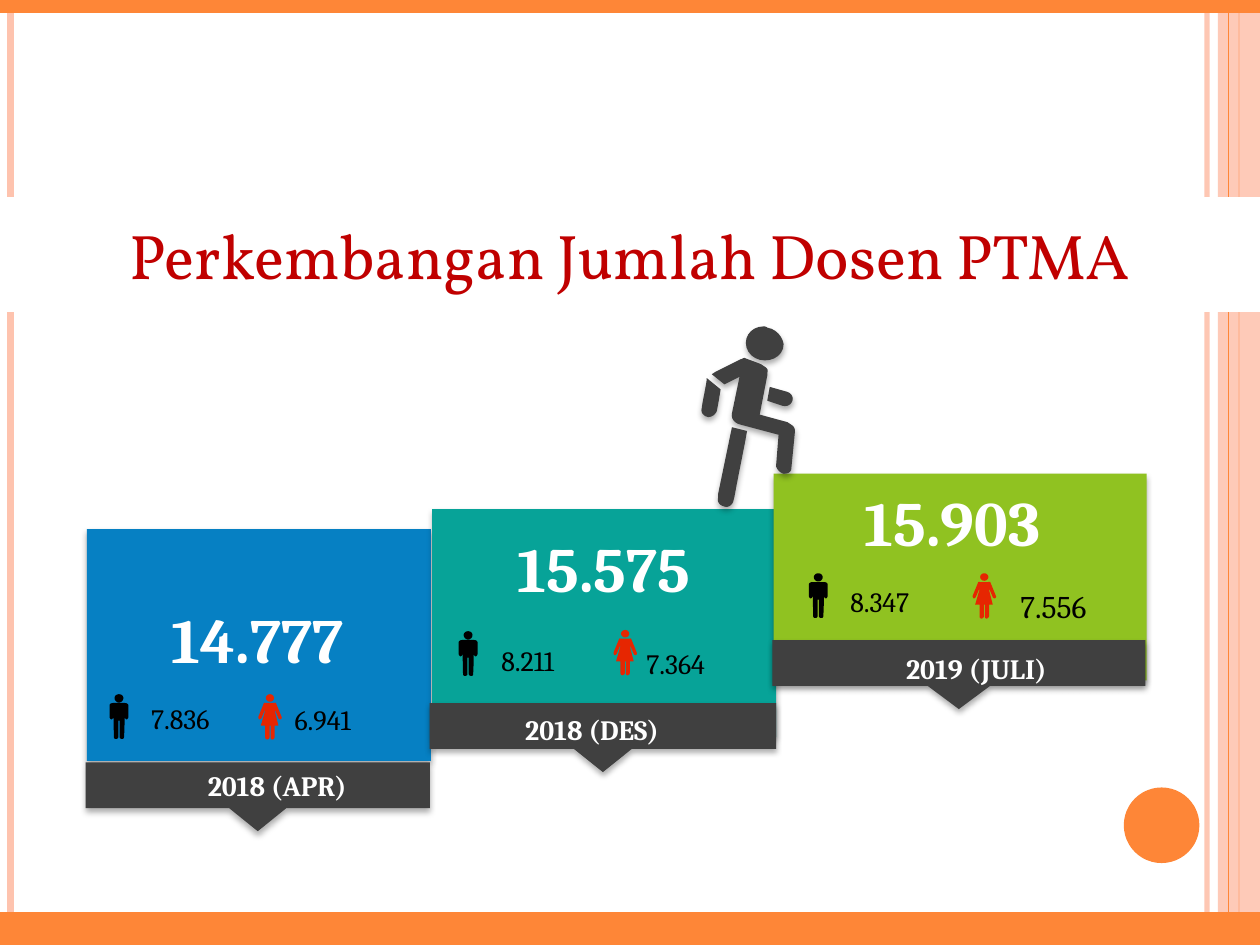
from dataclasses import dataclass

from lxml.etree import SubElement
from pptx import Presentation
from pptx.dml.color import RGBColor
from pptx.enum.shapes import MSO_CONNECTOR, MSO_SHAPE
from pptx.enum.text import MSO_ANCHOR, MSO_AUTO_SIZE, PP_ALIGN
from pptx.oxml.ns import qn
from pptx.util import Pt

COLORS = {
    "orange": "FE8637", "peach": "FEC3AE", "white": "FFFFFF", "black": "000000",
    "title": "C00000", "dark": "404040", "red": "E62601",
    "blue": "0680C3", "teal": "07A398", "green": "90C221",
}
WIDTH, HEIGHT = 720, 540
ICON_UNIT = 0.72  # points per unit in the outlines below
CURVE_STEPS = 6
FINE = 100        # freeform coordinates are whole numbers

MAN = """M 3 7 L 12 7 C 14 7 15 8 15 9 L 15 18 C 15 19 14 20 13.5 20 C 13 20 12 19 12 18
L 12 12 C 12 19 12 27 11.5 34 C 11.5 35 11 35.5 10 35.5 C 9 35.5 8 35 8 34 L 8 21 L 7 21
L 7 34 C 7 35 6 35.5 5 35.5 C 4 35.5 3.5 35 3.5 34 L 3 12 L 3 18 C 3 19 2 20 1.5 20
C 1 20 0 19 0 18 L 0 9 C 0 8 1 7 3 7
M 7.5 0 C 9.5 0 11 1.5 11 3 C 11 5 9.5 6.5 7.5 6.5 C 5.5 6.5 4 5 4 3 C 4 1.5 5.5 0 7.5 0"""
WOMAN = """M 6 7 L 12 7 C 13 7 13.5 6.5 14 7 L 18.5 18 C 19 19 18 20 17.5 20
C 17 20 16 19.5 16 19 L 13.5 13 L 13 13 L 16 25 L 13 25 L 13 34 C 13 35 12 36 11 36
C 10 36 9.8 35 9.8 34 L 9.8 25 L 9 25 L 9 34 C 9 35 8 36 7 36 C 6 36 5.5 35 5.5 34
L 5.5 25 L 2 25 L 5.5 13 L 5 13 L 2.5 19 C 2 19.5 1.5 20 1 20 C 0.5 20 0 19 0 18
L 4.5 7 C 5 6.5 5 7 6 7
M 9.3 0 C 11 0 12.5 1.5 12.5 3 C 12.5 4.5 11 6 9.3 6 C 7.5 6 6 4.5 6 3 C 6 1.5 7.5 0 9.3 0"""
CLIMBER = """M 25 81 L 29 82 L 37 84 C 34 101 30 119 27 136 L 26 140 C 25 143 22 145 19 144
C 15 143 13 140 14 137 L 14 134
M 5 42 L 16 51 C 15 57 14 63 13 68 C 12 71 9 73 6 73 C 2 72 0 69 1 66 C 2 58 4 51 5 43
M 55 49 L 69 53 C 72 54 74 57 73 60 C 72 63 69 65 65 64 L 53 60
M 35 26 C 37 27 46 30 48 31 L 51 33 C 53 34 54 36 53 38 L 53 40 L 47 71 L 69 77
L 72 79 C 74 80 75 82 75 84 L 72 115 C 71 117 69 118 66 118 C 63 117 61 115 60 112
L 62 87 L 32 79 C 27 78 24 74 25 70 L 31 41 L 19 47 L 9 39 L 12 37 L 32 27 C 33 27 34 26 35 26
M 53 2 C 60 3 65 9 66 15 C 66 23 59 28 51 28 C 43 28 36 22 36 14 C 36 7 42 1 50 1
C 51 1 52 1 53 2"""


@dataclass
class Label:
    text: str
    x: float
    y: float
    w: float
    size: float = 16


@dataclass
class Stage:
    color: str
    block: tuple[float, float, float, float]
    banner: tuple[float, float, float]
    total: Label
    period: Label
    man: tuple[float, float]
    men: Label
    woman: tuple[float, float]
    women: Label


STAGES = [
    Stage("blue", (49.7, 302.4, 196.6, 132.5), (49, 435.6, 196.6),
          Label("14.777", 68.4, 339.8, 157.7, 36), Label("2018 (APR)", 101.5, 435.6, 113.8),
          (62.6, 396.7), Label("7.836", 79.2, 397.4, 73.4),
          (147.6, 396.7), Label("6.941", 161.3, 398.2, 74.2)),
    Stage("teal", (247, 290.9, 196.6, 130.3), (245.5, 401.8, 198),
          Label("15.575", 271.4, 298.8, 147.6, 36), Label("2018 (DES)", 282.2, 403.9, 112.3),
          (262.1, 360.7), Label("8.211", 279.4, 364.3, 68.4),
          (350.6, 360), Label("7.364", 362.2, 365.8, 68.4)),
    Stage("green", (442.1, 270.7, 213.1, 118.1), (441.4, 365.8, 213.1),
          Label("15.903", 466.6, 272.9, 155.5, 36), Label("2019 (JULI)", 498.2, 368.6, 119.5),
          (462.2, 327.6), Label("8.347", 478.8, 330.5, 73.4),
          (555.8, 327.6), Label("7.556", 576, 331.9, 85, 18)),
]


def rgb(name: str) -> RGBColor:
    return RGBColor.from_string(COLORS[name])


def paint(sp, color: str) -> None:
    sp.shadow.inherit = False
    sp.fill.solid()
    sp.fill.fore_color.rgb = rgb(color)
    sp.line.fill.background()


def set_alpha(sp, percent: int) -> None:
    for clr in sp.element.spPr.iter(qn("a:srgbClr")):
        SubElement(clr, qn("a:alpha"), val=str(percent * 1000))


def cast_shadow(sp) -> None:
    effects = sp.element.spPr.find(qn("a:effectLst"))
    shadow = SubElement(effects, qn("a:outerShdw"), blurRad=str(Pt(3.5)), dist=str(Pt(2.2)),
                        dir="5400000", algn="t", rotWithShape="0")
    clr = SubElement(shadow, qn("a:srgbClr"), val=COLORS["black"])
    SubElement(clr, qn("a:alpha"), val="32000")


def add_preset(s, kind, x: float, y: float, w: float, h: float, color: str):
    sp = s.shapes.add_shape(kind, Pt(x), Pt(y), Pt(w), Pt(h))
    paint(sp, color)
    return sp


def add_stripe(s, x: float, color: str, width: float):
    c = s.shapes.add_connector(MSO_CONNECTOR.STRAIGHT, Pt(x), 0, Pt(x), Pt(HEIGHT))
    c.line.color.rgb = rgb(color)
    c.line.width = Pt(width)
    SubElement(c.element.spPr, qn("a:effectLst"))
    return c


def trace(path: str) -> list[list[tuple[float, float]]]:
    """Turn an M/L/C outline into closed polygons, sampling each cubic curve."""
    contours = []
    tokens = iter(path.split())
    for command in tokens:
        count = 3 if command == "C" else 1
        pts = [(float(next(tokens)), float(next(tokens))) for _ in range(count)]
        if command == "M":
            contours.append(pts)
        elif command == "L":
            contours[-1] += pts
        else:
            p0, (p1, p2, p3) = contours[-1][-1], pts
            for i in range(1, CURVE_STEPS + 1):
                t = i / CURVE_STEPS
                u = 1 - t
                contours[-1].append(tuple(
                    u**3 * a + 3 * u * u * t * b + 3 * u * t * t * c + t**3 * d
                    for a, b, c, d in zip(p0, p1, p2, p3)))
    return contours


def add_outline(s, contours, x: float, y: float, color: str, unit: float = ICON_UNIT):
    fine = [[(px * FINE, py * FINE) for px, py in contour] for contour in contours]
    builder = s.shapes.build_freeform(*fine[0][0], scale=Pt(unit) / FINE)
    for i, contour in enumerate(fine):
        if i:
            builder.move_to(*contour[0])
        builder.add_line_segments(contour[1:], close=True)
    sp = builder.convert_to_shape(Pt(x), Pt(y))
    paint(sp, color)
    return sp


def add_banner(s, x: float, y: float, w: float):
    mid, notch, base, tip = w / 2, w / 12, 26.2, 39.4
    pts = [(0, 0), (w, 0), (w, base), (mid + notch, base), (mid, tip), (mid - notch, base), (0, base)]
    return add_outline(s, [pts], x, y, "dark", unit=1)


def add_run(p, text: str, font: str, size: float, color: str, bold: bool = False) -> None:
    r = p.add_run()
    r.text = text
    r.font.name, r.font.size, r.font.bold = font, Pt(size), bold
    r.font.color.rgb = rgb(color)


def add_label(s, label: Label, heading: bool = False) -> None:
    height = label.size * 1.2 + 7.4
    tf = s.shapes.add_textbox(Pt(label.x), Pt(label.y), Pt(label.w), Pt(height)).text_frame
    tf.word_wrap = True
    p = tf.paragraphs[0]
    p.alignment = PP_ALIGN.CENTER if heading else PP_ALIGN.LEFT
    add_run(p, label.text, "Cambria", label.size, "white" if heading else "black", heading)


def add_frame(s) -> None:
    set_alpha(add_stripe(s, 689.8, "peach", 3), 93)
    add_stripe(s, 6, "peach", 4.5)
    add_stripe(s, 708, "orange", 1.5)
    set_alpha(add_preset(s, MSO_SHAPE.RECTANGLE, 696, 0, 24, HEIGHT, "peach"), 87)
    add_stripe(s, 702, "orange", 0.75)
    add_preset(s, MSO_SHAPE.OVAL, 642.2, 450, 43.2, 43.2, "orange")
    add_preset(s, MSO_SHAPE.RECTANGLE, 0, 521.2, WIDTH, 18.8, "orange")
    add_preset(s, MSO_SHAPE.RECTANGLE, 0, 0, WIDTH, 7.4, "orange")


def add_title(s) -> None:
    title = s.shapes.title
    s.shapes[-1].element.addnext(title.element)  # the white band covers the stripes
    title.left, title.top, title.width, title.height = 0, Pt(113.8), Pt(WIDTH), Pt(63.4)
    title.fill.solid()
    title.fill.fore_color.rgb = title.line.color.rgb = rgb("white")
    title.line.width = Pt(2)
    tf = title.text_frame
    tf.auto_size, tf.vertical_anchor = MSO_AUTO_SIZE.NONE, MSO_ANCHOR.MIDDLE
    p = tf.paragraphs[0]
    p.alignment, p.space_before = PP_ALIGN.CENTER, Pt(6)
    add_run(p, "Perkembangan Jumlah Dosen PTMA", "Vollkorn", 36, "title")


def add_stage(s, stage: Stage) -> None:
    cast_shadow(add_preset(s, MSO_SHAPE.RECTANGLE, *stage.block, stage.color))
    cast_shadow(add_banner(s, *stage.banner))
    add_label(s, stage.total, heading=True)
    add_label(s, stage.period, heading=True)
    add_outline(s, trace(MAN), *stage.man, "black")
    add_label(s, stage.men)
    add_outline(s, trace(WOMAN), *stage.woman, "red")
    add_label(s, stage.women)


def main() -> None:
    prs = Presentation()
    prs.slide_width, prs.slide_height = Pt(WIDTH), Pt(HEIGHT)
    s = prs.slides.add_slide(prs.slide_layouts[5])
    add_frame(s)
    add_title(s)
    for stage in STAGES:
        add_stage(s, stage)
    cast_shadow(add_outline(s, trace(CLIMBER), 400.3, 185.8, "dark"))
    prs.save("out.pptx")


if __name__ == "__main__":
    main()
